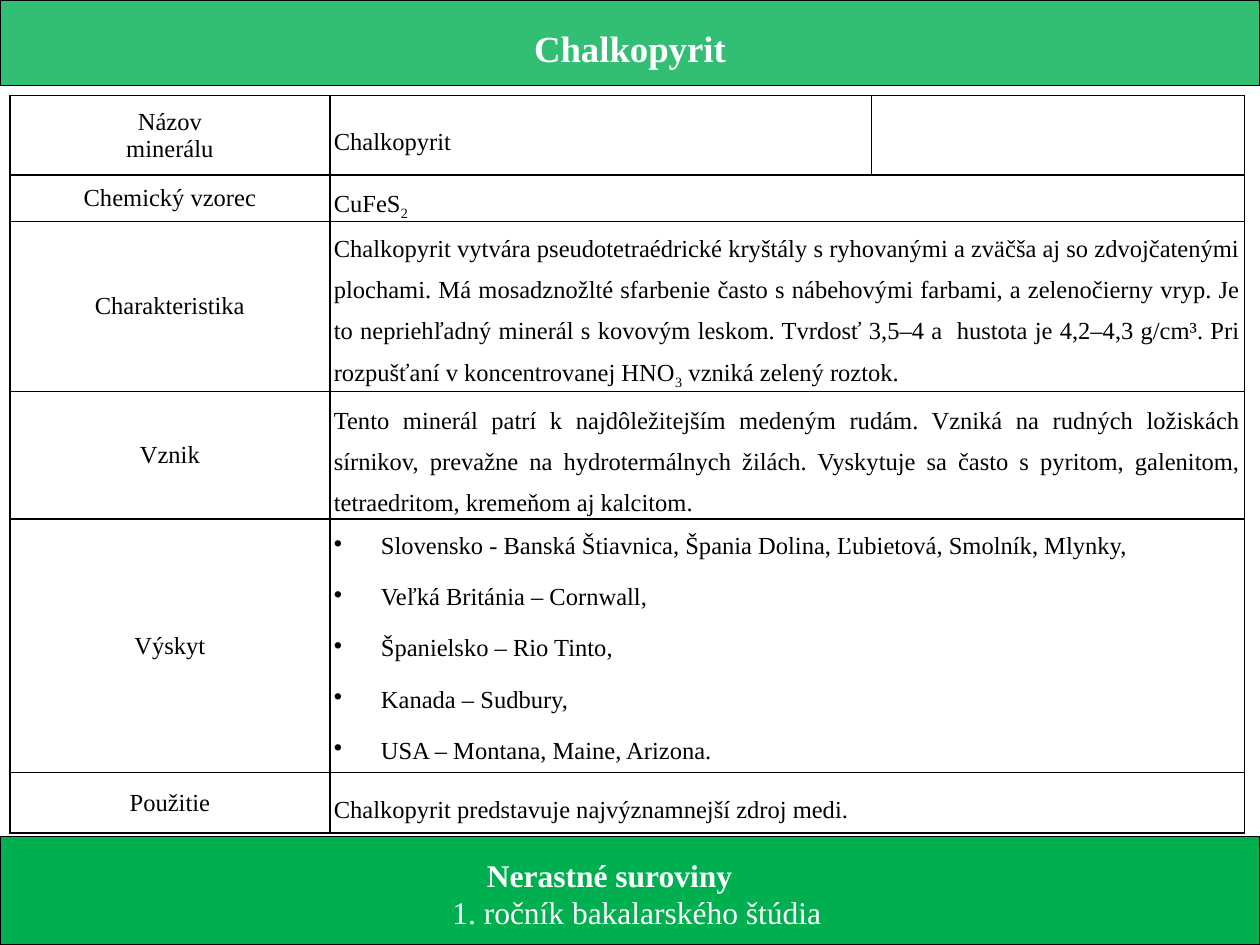
from dataclasses import dataclass
from typing import Any

from lxml.etree import SubElement
from pptx import Presentation
from pptx.dml.color import RGBColor
from pptx.enum.shapes import MSO_SHAPE
from pptx.enum.text import MSO_ANCHOR, MSO_AUTO_SIZE, PP_ALIGN
from pptx.oxml.ns import qn
from pptx.util import Cm, Pt


@dataclass(frozen=True)
class Theme:
    font: str = "Times New Roman"
    green: RGBColor = RGBColor(0x00, 0xB0, 0x50)
    ink: RGBColor = RGBColor(0, 0, 0)
    light: RGBColor = RGBColor(0xFF, 0xFF, 0xFF)
    title: float = 21
    footer: float = 18
    body: float = 14


@dataclass(frozen=True)
class Band:
    top: float
    height: float
    opacity: int
    margins: dict[str, Any]


@dataclass(frozen=True)
class Property:
    label: tuple[str, ...]
    details: tuple[str, ...]
    height: float
    align: PP_ALIGN = PP_ALIGN.JUSTIFY
    bulleted: bool = False
    spans: bool = True


THEME = Theme()
WIDTH, HEIGHT = 25.4, 19.05
COLUMNS = (6.45, 10.92, 7.52)
HEADER = Band(0, 1.73, 80, {"margin_top": Cm(0.3), "margin_bottom": Cm(0.1)})
FOOTER = Band(16.87, 2.18, 100, {"margin_top": Cm(0.2), "margin_bottom": Cm(0.1),
                                 "margin_left": Cm(0.25), "margin_right": Cm(1.07)})
CELL_FORMAT = {"margin_left": Cm(0.08), "margin_right": Cm(0.08),
               "margin_top": 0, "margin_bottom": 0,
               "vertical_anchor": MSO_ANCHOR.MIDDLE}
LABEL_FORMAT = {"alignment": PP_ALIGN.CENTER}
DETAIL_FORMAT = {"line_spacing": 1.5, "space_after": Pt(6)}
PROPERTIES = (
    Property(("Názov", "minerálu"), ("Chalkopyrit",), 1.6, PP_ALIGN.LEFT, spans=False),
    Property(("Chemický vzorec",), ("CuFeS_2_",), 0.86, PP_ALIGN.LEFT),
    Property(("Charakteristika",), (
        "Chalkopyrit vytvára pseudotetraédrické kryštály s ryhovanými a zväčša aj so "
        "zdvojčatenými plochami. Má mosadznožlté sfarbenie často s nábehovými farbami, "
        "a zelenočierny vryp. Je to nepriehľadný minerál s kovovým leskom. Tvrdosť 3,5–4 "
        "a  hustota je 4,2–4,3 g/cm³. Pri rozpušťaní v koncentrovanej HNO_3_ vzniká "
        "zelený roztok.",), 3.43),
    Property(("Vznik",), (
        "Tento minerál patrí k najdôležitejším medeným rudám. Vzniká na rudných ložiskách "
        "sírnikov, prevažne na hydrotermálnych žilách. Vyskytuje sa často s pyritom, "
        "galenitom, tetraedritom, kremeňom aj kalcitom.",), 2.57),
    Property(("Výskyt",), (
        "Slovensko - Banská Štiavnica, Špania Dolina, Ľubietová, Smolník, Mlynky,",
        "Veľká Británia – Cornwall,",
        "Španielsko – Rio Tinto,",
        "Kanada – Sudbury,",
        "USA – Montana, Maine, Arizona."), 5.11, bulleted=True),
    Property(("Použitie",), ("Chalkopyrit predstavuje najvýznamnejší zdroj medi.",), 1.22),
)


def apply_format(target: Any, values: dict[str, Any]) -> None:
    for attribute, value in values.items():
        setattr(target, attribute, value)


def write_paragraph(paragraph: Any, text: str, size: float, color: RGBColor,
                    layout: dict[str, Any], bold: bool = False) -> None:
    apply_format(paragraph, layout)
    for position, part in enumerate(text.split("_")):
        if not part:
            continue
        run = paragraph.add_run()
        run.text = part
        apply_format(run.font, {"name": THEME.font, "size": Pt(size), "bold": bold})
        run.font.color.rgb = color
        if position % 2:
            run.font._element.set("baseline", "-25000")


def add_lines(frame: Any, lines: tuple[str, ...], layout: dict[str, Any]) -> list[Any]:
    paragraphs = [frame.paragraphs[0]] + [frame.add_paragraph() for _ in lines[1:]]
    for paragraph, line in zip(paragraphs, lines):
        write_paragraph(paragraph, line, THEME.body, THEME.ink, layout)
    return paragraphs


def add_bullet(paragraph: Any) -> None:
    properties = paragraph._p.get_or_add_pPr()
    properties.set("marL", str(Cm(0.95)))
    properties.set("indent", str(Cm(-0.95)))
    SubElement(properties, qn("a:buChar"), char="•")


def style_band(shape: Any, band: Band) -> None:
    apply_format(shape, {"left": 0, "top": Cm(band.top),
                         "width": Cm(WIDTH), "height": Cm(band.height)})
    shape.fill.solid()
    shape.fill.fore_color.rgb = THEME.green
    if band.opacity < 100:
        color = shape.fill._xPr.find(qn("a:solidFill"))[0]
        SubElement(color, qn("a:alpha"), val=str(band.opacity * 1000))
    shape.line.color.rgb = THEME.ink
    shape.line.width = Pt(0.75)
    apply_format(shape.text_frame, {"word_wrap": True, "auto_size": MSO_AUTO_SIZE.NONE,
                                    "vertical_anchor": MSO_ANCHOR.MIDDLE, **band.margins})


def style_cell(cell: Any) -> None:
    apply_format(cell, CELL_FORMAT)
    properties = cell._tc.get_or_add_tcPr()
    for side in ("lnL", "lnR", "lnT", "lnB"):
        border = SubElement(properties, qn(f"a:{side}"), w=str(Pt(1)))
        fill = SubElement(border, qn("a:solidFill"))
        SubElement(fill, qn("a:srgbClr"), val=str(THEME.ink))
    cell.fill.background()


def add_header(slide: Any) -> None:
    title = slide.shapes.title
    style_band(title, HEADER)
    write_paragraph(title.text_frame.paragraphs[0], "Chalkopyrit", THEME.title,
                    THEME.light, LABEL_FORMAT, bold=True)


def add_footer(slide: Any) -> None:
    footer = slide.shapes.add_shape(MSO_SHAPE.RECTANGLE, 0, 0, Cm(1), Cm(1))
    footer.shadow.inherit = False
    style_band(footer, FOOTER)
    course = footer.text_frame.paragraphs[0]
    write_paragraph(course, "Nerastné suroviny", THEME.footer, THEME.light,
                    LABEL_FORMAT, bold=True)
    year = footer.text_frame.add_paragraph()
    write_paragraph(year, "1. ročník bakalarského štúdia", THEME.footer, THEME.light,
                    LABEL_FORMAT)
    year._p.get_or_add_pPr().set("marL", str(Cm(1.1)))


def add_properties(slide: Any) -> None:
    heights = [mineral_property.height for mineral_property in PROPERTIES]
    table = slide.shapes.add_table(len(PROPERTIES), len(COLUMNS), Cm(0.2), Cm(1.93),
                                   Cm(sum(COLUMNS)), Cm(sum(heights))).table
    apply_format(table, {"first_row": False, "horz_banding": False})
    for column, width in zip(table.columns, COLUMNS):
        column.width = Cm(width)
    for index, mineral_property in enumerate(PROPERTIES):
        table.rows[index].height = Cm(mineral_property.height)
        label, detail, last = (table.cell(index, column) for column in range(3))
        for cell in (label, detail, last):
            style_cell(cell)
        if mineral_property.spans:
            detail.merge(last)
        add_lines(label.text_frame, mineral_property.label, LABEL_FORMAT)
        paragraphs = add_lines(detail.text_frame, mineral_property.details,
                               {**DETAIL_FORMAT, "alignment": mineral_property.align})
        if mineral_property.bulleted:
            detail.vertical_anchor = MSO_ANCHOR.TOP
            for paragraph in paragraphs:
                add_bullet(paragraph)


def main() -> None:
    presentation = Presentation()
    apply_format(presentation, {"slide_width": Cm(WIDTH), "slide_height": Cm(HEIGHT)})
    slide = presentation.slides.add_slide(presentation.slide_layouts[5])
    add_header(slide)
    add_footer(slide)
    add_properties(slide)
    presentation.save("out.pptx")


if __name__ == "__main__":
    main()
